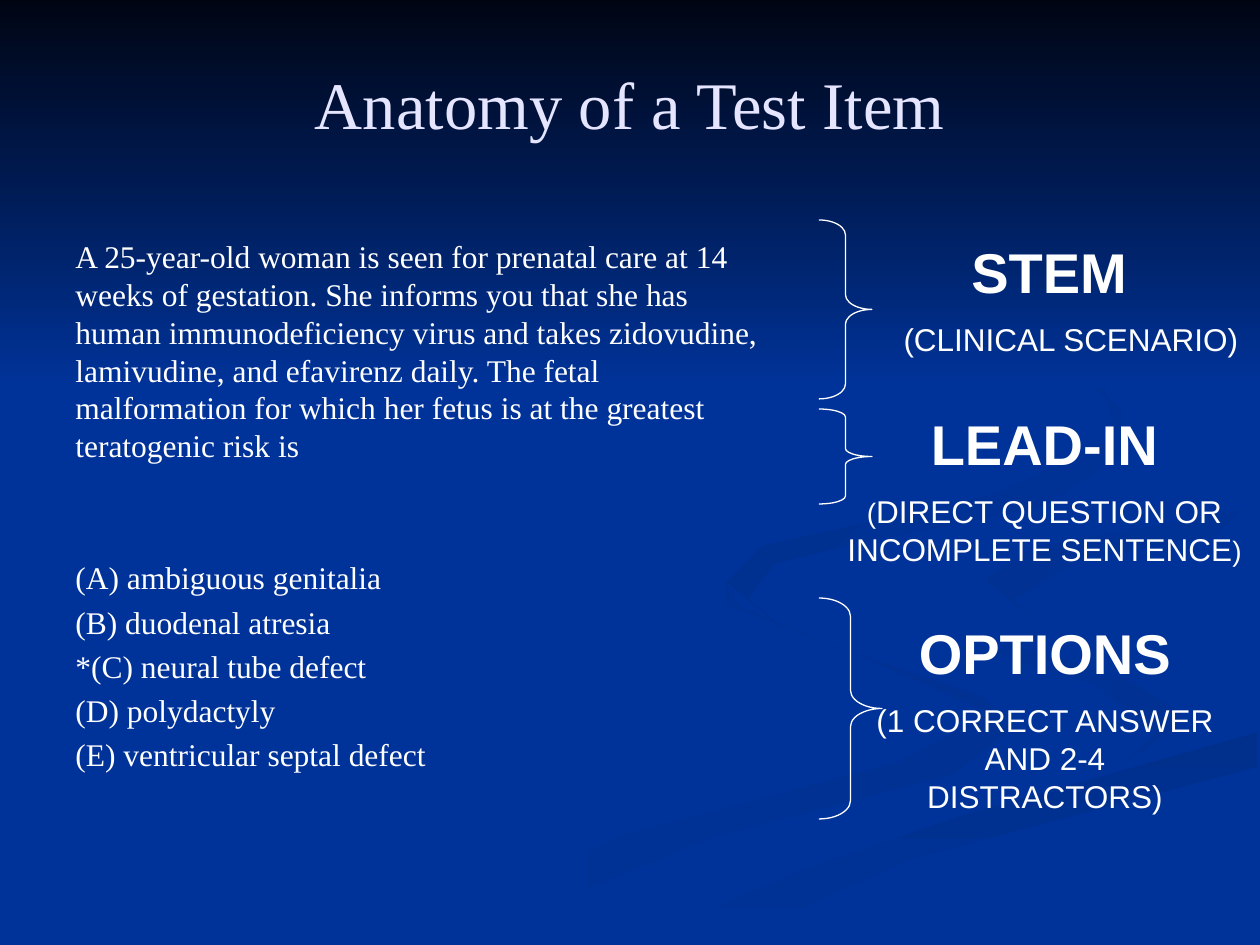
from pptx import Presentation
from pptx.dml.color import RGBColor
from pptx.enum.shapes import MSO_SHAPE as Shape
from pptx.enum.text import MSO_ANCHOR as Anchor, PP_ALIGN as Align
from pptx.util import Emu, Pt

EMU_PER_PX = 914400 / 126
BLUE = RGBColor(0x00, 0x33, 0x99)
NIGHT = RGBColor(0x00, 0x05, 0x14)
SHADE = RGBColor(0x00, 0x31, 0x93)
DEEP_SHADE = RGBColor(0x00, 0x2F, 0x8C)
LAVENDER = RGBColor(0xE5, 0xE5, 0xFF)
WHITE = RGBColor(0xFF, 0xFF, 0xFF)
SERIF, SANS = "Times New Roman", "Arial"

# Each ribbon: start colour, end colour, clockwise angle, outline in px
RIBBONS = [
    (BLUE, SHADE, 0, [
        (984, 697), (833, 646), (740, 606), (725, 578), (726, 605), (856, 654),
        (990, 713), (900, 762), (629, 833), (378, 944), (455, 944), (711, 838),
        (953, 774), (1008, 732)]),
    (BLUE, SHADE, 45, [
        (1188, 718), (1119, 674), (939, 617), (912, 585), (965, 645),
        (1094, 685), (1157, 732), (1126, 762)]),
    (DEEP_SHADE, BLUE, 90, [
        (634, 944), (719, 944), (910, 859), (1257, 767), (1257, 732),
        (963, 815), (794, 873)]),
    (BLUE, BLUE, 0, [
        (913, 585), (956, 627), (1159, 689), (1188, 725), (1137, 760),
        (835, 842), (601, 944), (634, 944), (794, 873), (963, 815),
        (1259, 732), (1259, 678), (1029, 620), (985, 580), (1036, 547),
        (1259, 507), (1259, 488), (993, 532)]),
    (SHADE, BLUE, 45, [
        (984, 580), (1041, 625), (1014, 600), (1082, 558), (1257, 529),
        (1257, 507), (1034, 547)]),
    (DEEP_SHADE, BLUE, 45, [
        (861, 542), (1040, 507), (1120, 456), (1121, 408), (960, 294),
        (1104, 386), (1116, 438), (997, 494), (762, 546), (727, 582),
        (784, 630), (748, 599), (774, 564)]),
]

QUESTION = (
    "A 25-year-old woman is seen for prenatal care at 14 weeks of gestation. "
    "She informs you that she has human immunodeficiency virus and takes "
    "zidovudine, lamivudine, and efavirenz daily. The fetal malformation for "
    "which her fetus is at the greatest teratogenic risk is")
OPTIONS = ["(A) ambiguous genitalia", "(B) duodenal atresia",
           "*(C) neural tube defect", "(D) polydactyly",
           "(E) ventricular septal defect"]

# Each part: brace box, brace curl, label box, heading, heading indent, note runs
PARTS = [
    ((819, 220, 53, 179), 0.28, (882, 231, 378, 137), "STEM", 77,
     [("(CLINICAL SCENARIO)", 18)]),
    ((819, 409, 53, 95), 0.15, (829, 403, 431, 175), "LEAD-IN", 0,
     [("(", 16), ("DIRECT QUESTION OR INCOMPLETE SENTENCE", 18), (")", 16)]),
    ((819, 598, 63, 221), 0.29, (861, 612, 368, 214), "OPTIONS", 0,
     [("(1 CORRECT ANSWER AND 2-4 DISTRACTORS)", 18)]),
]


def px(length):
    return Emu(round(length * EMU_PER_PX))


def paint(shape, start, end, angle):
    """Fill without outline; the angle runs clockwise."""
    shape.shadow.inherit = False
    shape.line.fill.background()
    if start == end:
        shape.fill.solid()
        shape.fill.fore_color.rgb = start
        return
    shape.fill.gradient()
    shape.fill.gradient_angle = -angle % 360
    for stop, color in zip(shape.fill.gradient_stops, (start, end)):
        stop.color.rgb = color


def add_ribbon(page, start, end, angle, outline):
    builder = page.shapes.build_freeform(*outline[0], scale=EMU_PER_PX)
    builder.add_line_segments(outline[1:], close=True)
    paint(builder.convert_to_shape(), start, end, angle)


def add_text_box(page, box, anchor=Anchor.TOP):
    frame = page.shapes.add_textbox(*map(px, box)).text_frame
    frame.word_wrap = True
    frame.vertical_anchor = anchor
    return frame


def add_para(frame, spans, font, color=WHITE, align=Align.LEFT, before=0,
             bold=False, indent=0):
    """Write (text, size) spans as one paragraph, reusing an empty first one."""
    first = frame.paragraphs[0]
    para = frame.add_paragraph() if first.runs else first
    para.alignment = align
    para.space_before = Pt(before)
    if indent:
        para._p.get_or_add_pPr().set("marL", str(px(indent)))
    for text, size in spans:
        span = para.add_run()
        span.text = text
        span.font.name = font
        span.font.size = Pt(size)
        span.font.bold = bold
        span.font.color.rgb = color


def add_brace(page, box, curl):
    brace = page.shapes.add_shape(Shape.RIGHT_BRACE, *map(px, box))
    brace.adjustments[0] = curl
    brace.adjustments[1] = 0.5
    brace.shadow.inherit = False
    brace.fill.background()
    brace.line.color.rgb = WHITE
    brace.line.width = Pt(0.75)


def add_label(page, box, heading, indent, note):
    frame = add_text_box(page, box)
    align = Align.LEFT if indent else Align.CENTER
    add_para(frame, [(heading, 32)], SANS, align=align, before=16, bold=True,
             indent=indent)
    add_para(frame, note, SANS, align=Align.CENTER, before=9)


def add_test_item(page):
    frame = add_text_box(page, (63, 231, 714, 592))
    add_para(frame, [(QUESTION, 18)], SERIF, before=3.6)
    for index, option in enumerate(OPTIONS):
        add_para(frame, [(option, 18)], SERIF, before=3.6 if index else 54)


def main():
    deck = Presentation()
    deck.slide_width, deck.slide_height = px(1260), px(945)
    page = deck.slides.add_slide(deck.slide_layouts[6])
    page.background.fill.solid()
    page.background.fill.fore_color.rgb = BLUE
    for ribbon in RIBBONS:
        add_ribbon(page, *ribbon)
    sky = page.shapes.add_shape(Shape.RECTANGLE, 0, 0, px(1260), px(388))
    paint(sky, NIGHT, BLUE, 90)

    title = add_text_box(page, (63, 38, 1134, 130), Anchor.MIDDLE)
    add_para(title, [("Anatomy of a Test Item", 38)], SERIF, LAVENDER,
             Align.CENTER)
    add_test_item(page)
    for brace_box, curl, *label in PARTS:
        add_brace(page, brace_box, curl)
        add_label(page, *label)
    deck.save("out.pptx")


if __name__ == "__main__":
    main()
